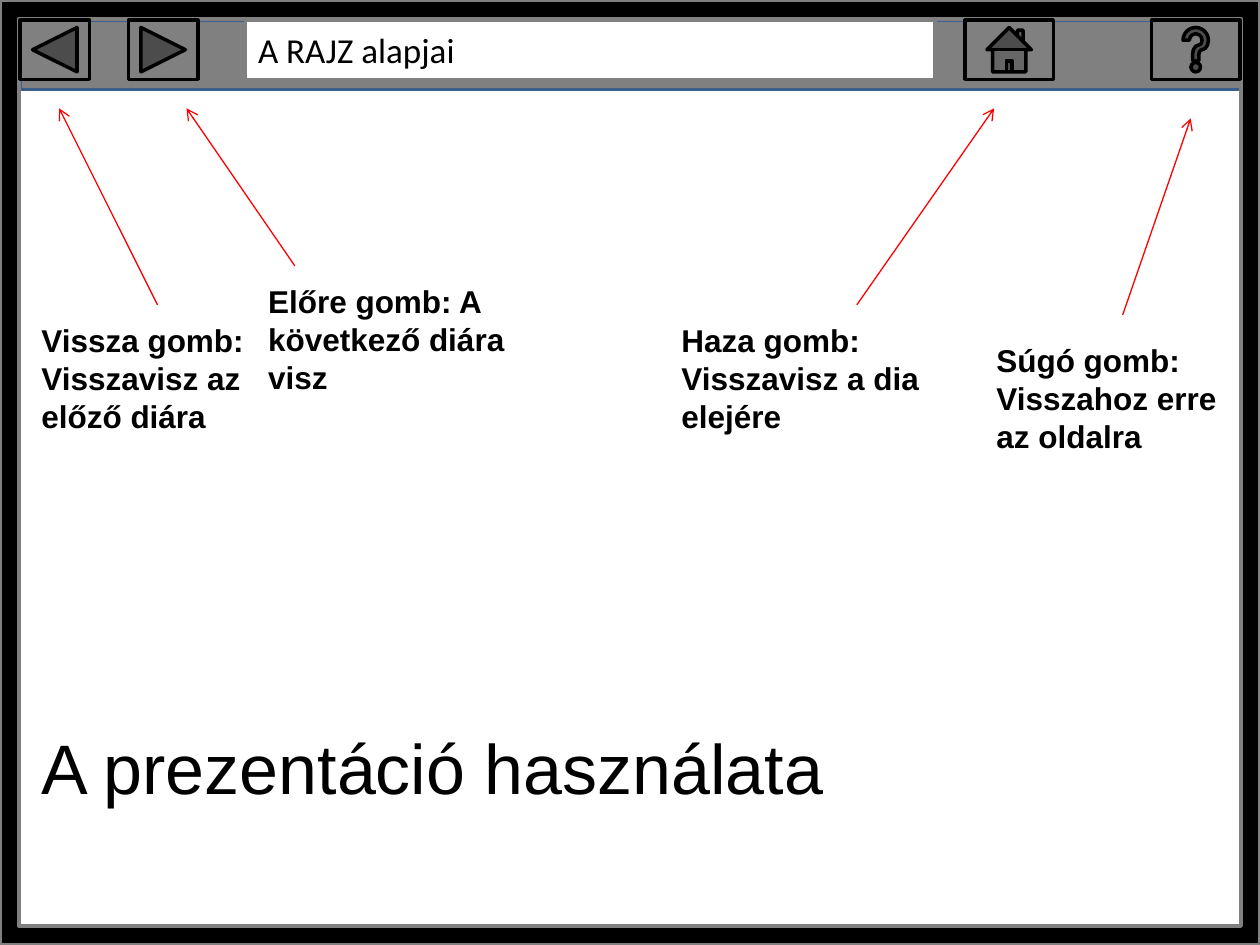
from dataclasses import dataclass

from lxml import etree
from pptx import Presentation
from pptx.dml.color import RGBColor
from pptx.enum.shapes import MSO_CONNECTOR, MSO_SHAPE
from pptx.enum.text import MSO_ANCHOR, MSO_AUTO_SIZE, PP_ALIGN
from pptx.oxml.ns import qn
from pptx.util import Inches, Pt

RECT, FRAME = MSO_SHAPE.RECTANGLE, MSO_SHAPE.FRAME
BACK = MSO_SHAPE.ACTION_BUTTON_BACK_OR_PREVIOUS
FORWARD = MSO_SHAPE.ACTION_BUTTON_FORWARD_OR_NEXT
HOME, HELP = MSO_SHAPE.ACTION_BUTTON_HOME, MSO_SHAPE.ACTION_BUTTON_HELP
STRAIGHT = MSO_CONNECTOR.STRAIGHT
TOP, MIDDLE = MSO_ANCHOR.TOP, MSO_ANCHOR.MIDDLE
LEFT = PP_ALIGN.LEFT
FIT_SHAPE = MSO_AUTO_SIZE.SHAPE_TO_FIT_TEXT

BLACK, GRAY, WHITE, RED, BLUE = "000000", "808080", "FFFFFF", "FF0000", "3A5F8C"
BAR_TOP, BUTTON_HEIGHT = 0.16, 0.47


@dataclass
class Button:
    kind: MSO_SHAPE
    x: float
    w: float


@dataclass
class Callout:
    text: str
    box: tuple[float, float, float, float]
    start: tuple[float, float]
    end: tuple[float, float]


BUTTONS = [
    Button(FORWARD, 1.02, 0.55),
    Button(BACK, 0.16, 0.55),
    Button(HOME, 7.66, 0.7),
    Button(HELP, 9.14, 0.7),
]

CALLOUTS = [
    Callout("Vissza gomb: Visszavisz az előző diára",
            (0.23, 2.5, 2.19, 1.01), (1.25, 2.42), (0.47, 0.86)),
    Callout("Előre gomb: A következő diára visz",
            (2.03, 2.19, 2.34, 1.01), (2.34, 2.11), (1.48, 0.86)),
    Callout("Haza gomb: Visszavisz a dia elejére",
            (5.31, 2.5, 2.42, 1.01), (6.8, 2.42), (7.89, 0.86)),
    Callout("Súgó gomb: Visszahoz erre az oldalra",
            (7.81, 2.66, 2.03, 1.01), (8.91, 2.5), (9.45, 0.94)),
]


def rgb(color: str) -> RGBColor:
    return RGBColor.from_string(color)


def write(shape, text: str, *, size: float, font: str = "Arial",
          bold: bool = False, anchor=TOP, auto_size=None) -> None:
    tf = shape.text_frame
    tf.word_wrap = True
    tf.vertical_anchor = anchor
    if auto_size is not None:
        tf.auto_size = auto_size
    p = tf.paragraphs[0]
    p.alignment = LEFT
    r = p.add_run()
    r.text = text
    r.font.size = Pt(size)
    r.font.name = font
    r.font.bold = bold
    r.font.color.rgb = rgb(BLACK)


def add_shape(s, kind, x: float, y: float, w: float, h: float,
              fill: str, line: str):
    sp = s.shapes.add_shape(kind, Inches(x), Inches(y), Inches(w), Inches(h))
    sp.shadow.inherit = False
    sp.fill.solid()
    sp.fill.fore_color.rgb = rgb(fill)
    sp.line.color.rgb = rgb(line)
    sp.line.width = Pt(2)
    return sp


def add_arrow(s, start: tuple[float, float], end: tuple[float, float]) -> None:
    c = s.shapes.add_connector(STRAIGHT, *map(Inches, start + end))
    c.line.color.rgb = rgb(RED)
    c.line.width = Pt(0.75)
    props = c.element.spPr
    etree.SubElement(props.find(qn("a:ln")), qn("a:tailEnd"), type="arrow")
    etree.SubElement(props, qn("a:effectLst"))


def add_callout(s, callout: Callout) -> None:
    add_arrow(s, callout.start, callout.end)
    tb = s.shapes.add_textbox(*map(Inches, callout.box))
    write(tb, callout.text, size=18, bold=True, auto_size=FIT_SHAPE)


def main() -> None:
    prs = Presentation()
    prs.slide_width, prs.slide_height = Inches(10), Inches(7.5)
    s = prs.slides.add_slide(prs.slide_layouts[5])

    # Toolbar and outer frame
    add_shape(s, RECT, 0.16, BAR_TOP, 9.69, 0.55, GRAY, BLUE)
    frame = add_shape(s, FRAME, 0, 0, 10, 7.5, BLACK, GRAY)
    frame.adjustments[0] = 0.02

    # Navigation buttons and presentation name
    for b in BUTTONS:
        add_shape(s, b.kind, b.x, BAR_TOP, b.w, BUTTON_HEIGHT, GRAY, BLACK)
    name = add_shape(s, RECT, 1.95, BAR_TOP, 5.47, BUTTON_HEIGHT, WHITE, GRAY)
    write(name, "A RAJZ alapjai", size=20, font="Calibri", anchor=MIDDLE)

    # Slide title
    title = s.shapes.title
    title.left, title.top = Inches(0.23), Inches(5.7)
    title.width, title.height = Inches(8.91), Inches(0.77)
    write(title, "A prezentáció használata", size=40, auto_size=FIT_SHAPE)

    # Button explanations
    for callout in CALLOUTS:
        add_callout(s, callout)

    prs.save("out.pptx")


if __name__ == "__main__":
    main()
